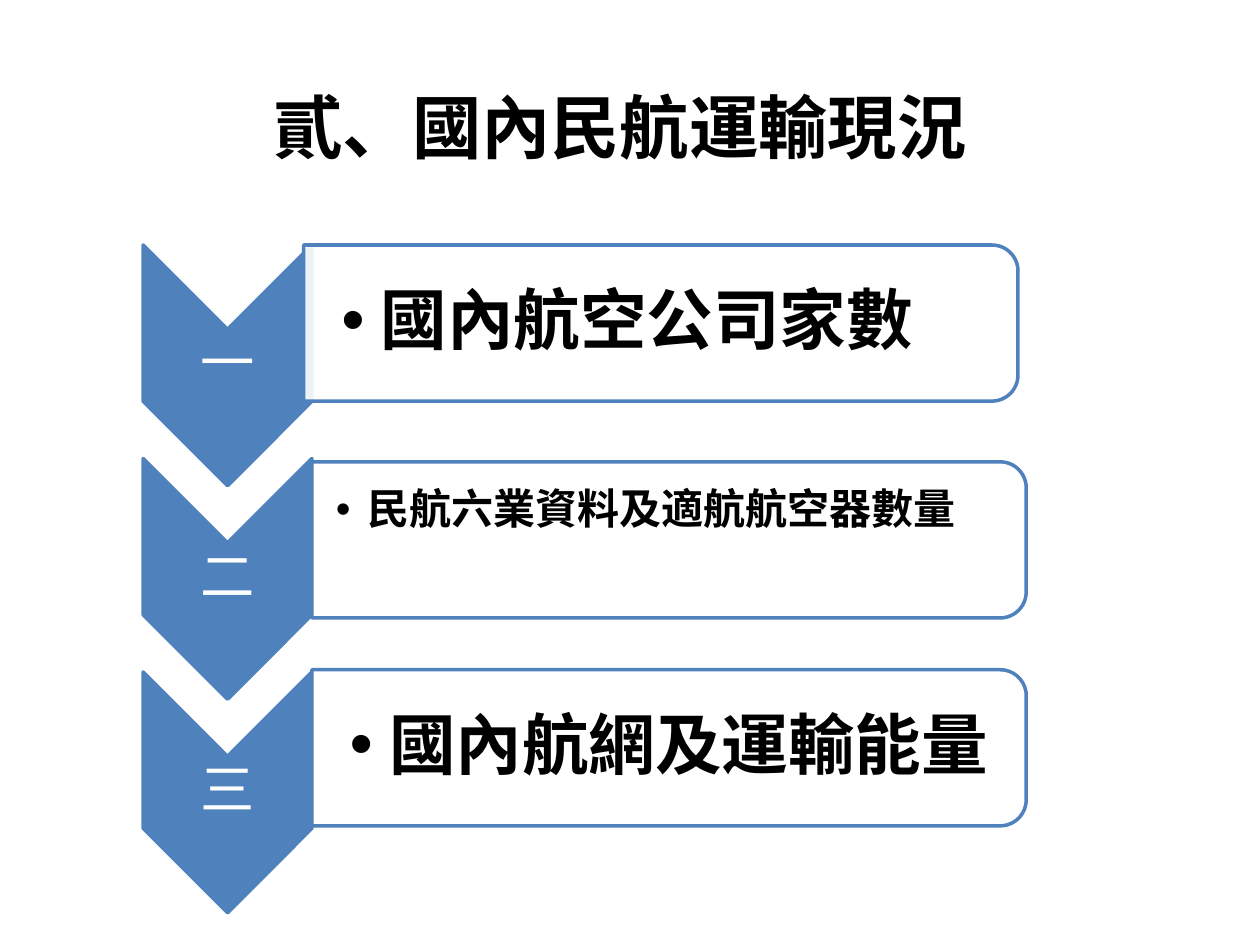
from dataclasses import dataclass

from lxml.etree import SubElement
from pptx import Presentation
from pptx.dml.color import RGBColor
from pptx.enum.shapes import MSO_SHAPE as Preset
from pptx.enum.text import MSO_ANCHOR as Anchor, PP_ALIGN as Align
from pptx.oxml.ns import qn
from pptx.util import Pt


@dataclass(frozen=True)
class Theme:
    blue: RGBColor = RGBColor(0x4F, 0x81, 0xBD)
    white: RGBColor = RGBColor(0xFF, 0xFF, 0xFF)
    black: RGBColor = RGBColor(0, 0, 0)
    font: str = "Noto Sans CJK SC"
    comma_font: str = "Noto Sans CJK TC"
    title_size: float = 39.6
    label_size: float = 31
    outline: float = 2
    bar_opacity: int = 90


@dataclass(frozen=True)
class Section:
    number: str
    text: str
    size: float
    bar_left: float
    bar_top: float
    hanging: float
    inset: float
    top_inset: float = 2
    anchor: Anchor = Anchor.MIDDLE


THEME = Theme()
SECTIONS = [
    Section("一", "國內航空公司家數", 38, 173.5, 140, 22.5, 21.6),
    Section("二", "民航六業資料及適航航空器數量", 24, 178.2, 263.9, 18, 13.7, 11, Anchor.TOP),
    Section("三", "國內航網及運輸能量", 38, 178.2, 382.7, 22.5, 21.6),
]
CHEVRON_LEFT, CHEVRON_TOP, CHEVRON_PITCH = 61.2 + 20.6, 140, 122
CHEVRON_WIDTH, CHEVRON_HEIGHT = 96.4, 137.6
LABEL_HEIGHT = 41
BAR_WIDTH, BAR_HEIGHT = 408.2, 89.2
TEXT_WIDTH, TEXT_HEIGHT = 404, 80.6


def add_span(para, text: str, *, size: float, color: RGBColor,
             bold: bool = False, font: str = THEME.font) -> None:
    span = para.add_run()
    span.text = text
    span.font.size, span.font.bold, span.font.name = Pt(size), bold, font
    span.font.color.rgb = color
    SubElement(span.font._element, qn("a:ea")).set("typeface", font)


def add_turned_shape(page, preset: Preset, left: float, top: float, width: float,
                     height: float, fill: RGBColor):
    """Turn a preset shape by 90 degrees so that it covers the given area."""
    shift = (width - height) / 2
    shape = page.shapes.add_shape(preset, Pt(left + shift), Pt(top - shift),
                                  Pt(height), Pt(width))
    shape.rotation = 90
    shape.shadow.inherit = False
    shape.fill.solid()
    shape.fill.fore_color.rgb = fill
    shape.line.color.rgb = THEME.blue
    shape.line.width = Pt(THEME.outline)
    return shape


def add_text_box(page, left: float, top: float, width: float, height: float,
                 insets: tuple, anchor: Anchor, space_after: float):
    """Add a text box and return its first paragraph."""
    box = page.shapes.add_textbox(Pt(left), Pt(top), Pt(width), Pt(height))
    frame = box.text_frame
    frame.word_wrap, frame.vertical_anchor = True, anchor
    (frame.margin_left, frame.margin_top,
     frame.margin_right, frame.margin_bottom) = map(Pt, insets)
    para = frame.paragraphs[0]
    para.line_spacing, para.space_after = 0.9, Pt(space_after)
    return para


def set_bullet(para, hanging: float) -> None:
    para.level = 1
    properties = para._p.get_or_add_pPr()
    properties.set("marL", str(Pt(hanging)))
    properties.set("indent", str(-Pt(hanging)))
    SubElement(properties, qn("a:buFont")).set("typeface", "Arial")
    SubElement(properties, qn("a:buChar")).set("char", "•")


def add_title(page) -> None:
    title = page.shapes.title
    title.left, title.top, title.width, title.height = map(Pt, (93.6, 29.5, 521.3, 85))
    title.text_frame.vertical_anchor = Anchor.MIDDLE
    para = title.text_frame.paragraphs[0]
    para.alignment = Align.CENTER
    for text, font in (("貳", THEME.font), ("、", THEME.comma_font),
                       ("國內民航運輸現況", THEME.font)):
        add_span(para, text, size=THEME.title_size, color=THEME.black, bold=True, font=font)


def add_chevron(page, section: Section, top: float) -> None:
    add_turned_shape(page, Preset.CHEVRON, CHEVRON_LEFT, top,
                     CHEVRON_WIDTH, CHEVRON_HEIGHT, THEME.blue)
    label_top = top + (CHEVRON_HEIGHT - LABEL_HEIGHT) / 2
    para = add_text_box(page, CHEVRON_LEFT, label_top, CHEVRON_WIDTH, LABEL_HEIGHT,
                        (1.5, 1.5, 1.5, 1.5), Anchor.MIDDLE, 6.3)
    para.alignment = Align.CENTER
    add_span(para, section.number, size=THEME.label_size, color=THEME.white)


def add_bar(page, section: Section) -> None:
    bar = add_turned_shape(page, Preset.ROUND_2_SAME_RECTANGLE, section.bar_left,
                           section.bar_top, BAR_WIDTH, BAR_HEIGHT, THEME.white)
    color = bar.fill._xPr.find(qn("a:solidFill"))[0]
    SubElement(color, qn("a:alpha")).set("val", str(THEME.bar_opacity * 1000))
    text_top = section.bar_top + (BAR_HEIGHT - TEXT_HEIGHT) / 2
    para = add_text_box(page, section.bar_left, text_top, TEXT_WIDTH, TEXT_HEIGHT,
                        (section.inset, section.top_inset, 2, 2), section.anchor, 2.7)
    set_bullet(para, section.hanging)
    add_span(para, section.text, size=section.size, color=THEME.black, bold=True)


def main() -> None:
    deck = Presentation()
    deck.slide_width, deck.slide_height = Pt(720), Pt(540)
    page = deck.slides.add_slide(deck.slide_layouts[5])
    add_title(page)
    for index, section in enumerate(SECTIONS):
        add_chevron(page, section, CHEVRON_TOP + index * CHEVRON_PITCH)
        add_bar(page, section)
    deck.save("out.pptx")


if __name__ == "__main__":
    main()
